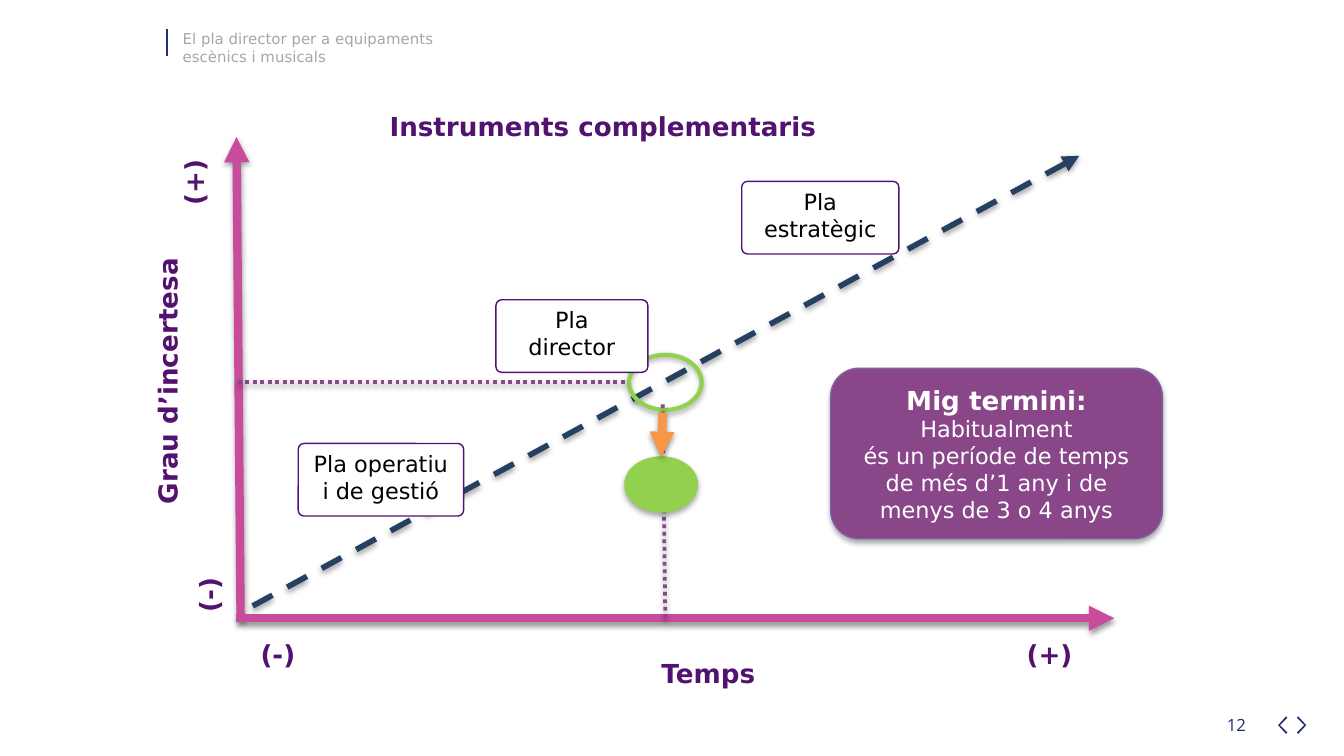
from lxml import etree
from pptx import Presentation, oxml
from pptx.dml.color import RGBColor
from pptx.enum import dml, shapes, text
from pptx.oxml import ns
from pptx.util import Pt

NAVY = RGBColor(0x26, 0x2E, 0x72)
GREY = RGBColor(0xA6, 0xA6, 0xA6)
PINK = RGBColor(0xC9, 0x4B, 0x9C)
STEEL = RGBColor(0x25, 0x40, 0x61)
PURPLE = RGBColor(0x52, 0x12, 0x70)
PLUM = RGBColor(0x89, 0x47, 0x89)
LILAC = RGBColor(0x7D, 0x60, 0xA0)
GREEN = RGBColor(0x92, 0xD0, 0x50)
ORANGE = RGBColor(0xF7, 0x96, 0x46)
WHITE = RGBColor(0xFF, 0xFF, 0xFF)
BLACK = RGBColor(0, 0, 0)
FONT = "DejaVu Sans"
CENTER = text.PP_ALIGN.CENTER


def set_effects(shape, shadow=None):
    """Replace inherited effects; shadow is an opacity in percent."""
    inner = ""
    if shadow:
        inner = (f'<a:outerShdw blurRad="{Pt(3.1)}" dist="{Pt(1.6)}" dir="5400000" '
                 f'rotWithShape="0"><a:srgbClr val="000000"><a:alpha val="{shadow}000"/>'
                 '</a:srgbClr></a:outerShdw>')
    properties = shape._element.spPr
    for old in properties.findall(ns.qn("a:effectLst")):
        properties.remove(old)
    properties.append(oxml.parse_xml(
        f'<a:effectLst {ns.nsdecls("a")}>{inner}</a:effectLst>'))


def add_line(page, start, end, color, width, dash=None, arrow=None, shadow=38):
    line = page.shapes.add_connector(
        shapes.MSO_CONNECTOR.STRAIGHT, *(Pt(value) for value in (*start, *end)))
    line.line.color.rgb = color
    line.line.width = Pt(width)
    if dash:
        line.line.dash_style = dash
    if arrow:
        outline = line.line._get_or_add_ln()
        etree.SubElement(outline, ns.qn(f"a:{arrow}")).set("type", "triangle")
    set_effects(line, shadow)


def add_shape(page, kind, left, top, width, height, fill=None, line=BLACK,
              weight=0.75, shadow=None):
    shape = page.shapes.add_shape(kind, Pt(left), Pt(top), Pt(width), Pt(height))
    if fill is None:
        shape.fill.background()
    else:
        shape.fill.solid()
        shape.fill.fore_color.rgb = fill
    shape.line.color.rgb = line
    shape.line.width = Pt(weight)
    set_effects(shape, shadow)
    return shape


def write(para, words, size=12, color=BLACK, bold=False, font=FONT, align=None):
    para.alignment = align
    span = para.add_run()
    span.text = words
    span.font.name = font
    span.font.size = Pt(size)
    span.font.bold = bold
    span.font.color.rgb = color


def add_text(page, left, top, width, height, *lines, rotation=0, **style):
    box = page.shapes.add_textbox(Pt(left), Pt(top), Pt(width), Pt(height))
    box.rotation = rotation
    frame = box.text_frame
    frame.word_wrap = True
    for index, words in enumerate(lines):
        para = frame.add_paragraph() if index else frame.paragraphs[0]
        write(para, words, **style)


def add_header(page, left, top):
    add_line(page, (left, top + 3.6), (left, top + 18), NAVY, 1, shadow=None)
    add_text(page, left + 1.5, top, 216.7, 26.6, "El pla director per a equipaments",
             "escènics i musicals", size=8, color=GREY)


def add_footer(page, left, top):
    add_text(page, left, top, 40.3, 18, "12", size=9, color=NAVY, font="Open Sans")

    # Previous and next chevrons, mirrored about their tips
    for tip, side in ((left + 34.5, 1), (left + 49.6, -1)):
        outline = [(Pt(tip + side * x), Pt(top + 4.4 + y)) for x, y in
                   ((4.3, 0), (0, 4.7), (4.3, 9.4), (5, 8.6), (1.1, 4.7), (5, 0.8))]
        builder = page.shapes.build_freeform(*outline[0])
        builder.add_line_segments(outline[1:])
        chevron = builder.convert_to_shape()
        chevron.fill.solid()
        chevron.fill.fore_color.rgb = NAVY
        chevron.line.fill.background()
        set_effects(chevron)


def add_plan(page, left, top, width, words):
    plan = add_shape(page, shapes.MSO_SHAPE.ROUNDED_RECTANGLE, left, top, width, 38.9,
                     fill=WHITE, line=PURPLE)
    plan.adjustments[0] = 0.08
    frame = plan.text_frame
    frame.word_wrap = True
    frame.vertical_anchor = text.MSO_ANCHOR.TOP
    frame.margin_left = frame.margin_right = Pt(6.3)
    frame.margin_top = Pt(2.7)
    frame.margin_bottom = 0
    write(frame.paragraphs[0], words, align=CENTER)


def add_diagram(page, left, top):
    def at(x, y):
        return left + x, top + y

    # Axes and diagonal
    add_line(page, at(116.7, 23.4), at(118.9, 281.9), PINK, 4.5, arrow="headEnd")
    add_line(page, at(586.9, 281.2), at(116.7, 281.2), PINK, 4.5, arrow="headEnd")
    add_line(page, at(568.2, 33.5), at(122.5, 276.2), STEEL, 3,
             dash=dml.MSO_LINE.DASH, arrow="headEnd")

    # Title and axis labels
    for words, x, y, width, rotation, align in (
            ("Instruments complementaris", 191.6, 5.4, 323.3, 0, None),
            ("Grau d’incertesa", 5.8, 140.8, 148.3, 270, None),
            ("Temps", 295.3, 298.5, 148.3, 0, CENTER),
            ("(+)", 68.5, 29.2, 51.1, 270, None),
            ("(-)", 76.4, 247.4, 51.1, 270, None),
            ("(-)", 122.5, 288.4, 37.4, 0, None),
            ("(+)", 532.9, 288.4, 54.7, 0, None)):
        add_text(page, *at(x, y), width, 24.5, words, rotation=rotation,
                 size=14, color=PURPLE, bold=True, align=align)

    # Master plan marker, its guides and its drop
    oval, dots = shapes.MSO_SHAPE.OVAL, dml.MSO_LINE.ROUND_DOT
    add_shape(page, oval, *at(327, 140.1), 38.9, 29.5, line=GREEN, weight=2.25, shadow=35)
    add_line(page, at(117.4, 154.5), at(324.8, 154.5), PLUM, 2, dash=dots)
    add_line(page, at(346.4, 281.2), at(345, 166.7), PLUM, 2, dash=dots)
    add_shape(page, oval, *at(324.8, 194.8), 38.9, 29.5, fill=GREEN, line=GREEN, shadow=35)
    add_line(page, at(345, 171), at(344.2, 194.8), ORANGE, 4.5, arrow="tailEnd")

    # Plans along the diagonal
    add_plan(page, *at(387.4, 47.2), 84.2, "Pla estratègic")
    add_plan(page, *at(255.7, 110.6), 81.4, "Pla director")
    add_plan(page, *at(149.8, 187.6), 88.6, "Pla operatiu i de gestió")


def add_term_panel(page, left, top, width, height):
    panel = add_shape(page, shapes.MSO_SHAPE.ROUNDED_RECTANGLE, left, top, width, height,
                      fill=PLUM, line=LILAC, shadow=35)
    frame = panel.text_frame
    frame.word_wrap = True
    frame.vertical_anchor = text.MSO_ANCHOR.MIDDLE
    write(frame.paragraphs[0], "Mig termini:", size=14, color=WHITE, bold=True, align=CENTER)
    for words in ("Habitualment",
                  "és un període de temps de més d’1 any i de menys de 3 o 4 anys"):
        write(frame.add_paragraph(), words, color=WHITE, align=CENTER)


def main():
    deck = Presentation()
    deck.slide_width, deck.slide_height = Pt(720), Pt(405)
    page = deck.slides.add_slide(deck.slide_layouts[6])
    add_header(page, 89.3, 12.2)
    add_footer(page, 650.2, 379.4)
    add_diagram(page, 10, 50)
    add_term_panel(page, 445, 197.3, 177.8, 91.4)
    deck.save("out.pptx")


if __name__ == "__main__":
    main()
